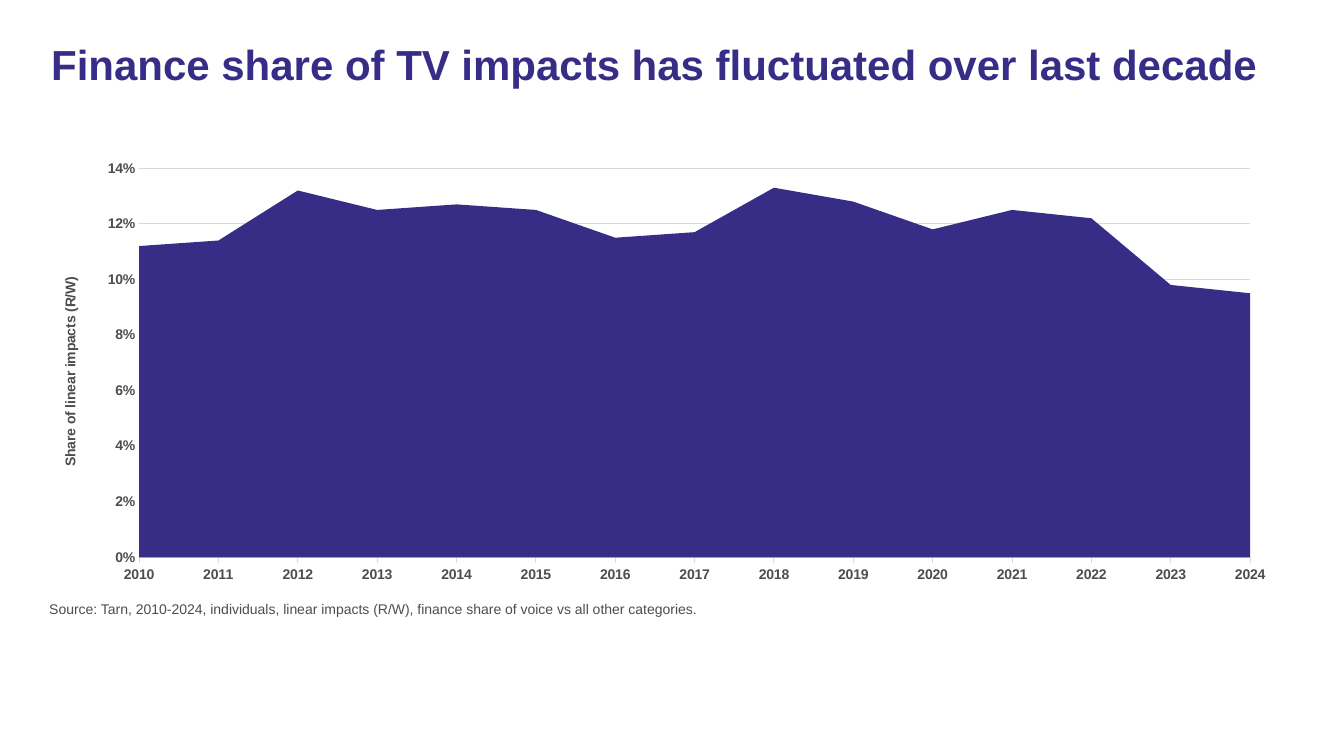
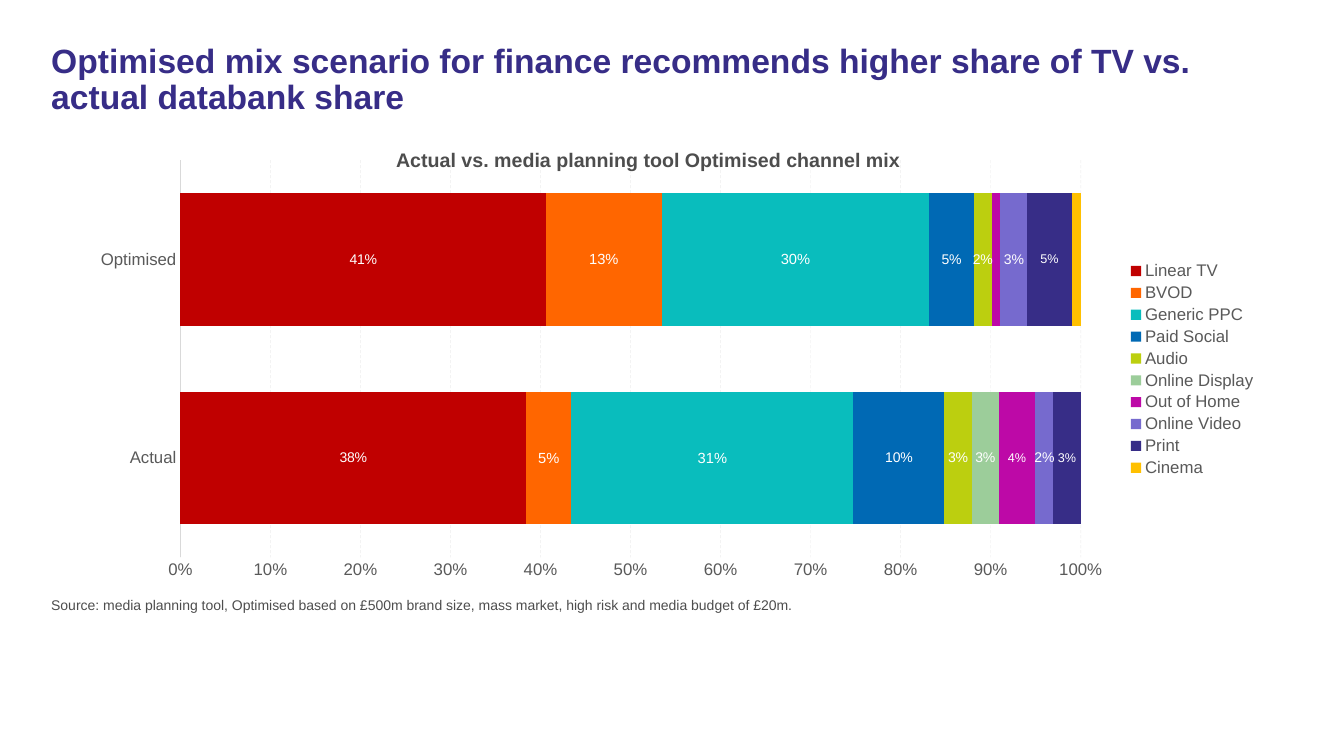
"""Two slides on finance advertising: share of TV impacts and channel mix."""
from pptx import Presentation
from pptx.chart.data import CategoryChartData
from pptx.dml.color import RGBColor
from pptx.enum.chart import XL_CHART_TYPE as ChartType, XL_LEGEND_POSITION as LegendPlace
from pptx.enum.chart import XL_TICK_MARK as TickMark
from pptx.enum.dml import MSO_LINE
from pptx.oxml import parse_xml
from pptx.oxml.ns import nsdecls
from pptx.util import Inches, Pt

FONT = "Arial"
INDIGO, GREY, AXIS_GREY, RULE, WHITE = "372D87", "4D4D4D", "595959", "D9D9D9", "FFFFFF"
LEFT, WIDTH = 0.41, 12.4

SHARE_TITLE = "Finance share of TV impacts has fluctuated over last decade"
SHARE_SOURCE = ("Source: Tarn, 2010-2024, individuals, linear impacts (R/W), "
                "finance share of voice vs all other categories.")
SHARE_AXIS = "Share of linear impacts (R/W)"
YEARS = [str(year) for year in range(2010, 2025)]
SHARES = [0.112, 0.114, 0.132, 0.125, 0.127, 0.125, 0.115, 0.117,
          0.133, 0.128, 0.118, 0.125, 0.122, 0.098, 0.095]
SHARE_FRAME = (LEFT, 1.51, WIDTH, 4.36)
SHARE_PLOT = (1.38, 1.67, 11.02, 3.86)

MIX_TITLE = ("Optimised mix scenario for finance recommends higher share of TV vs. "
             "actual databank share")
MIX_HEADING = "Actual vs. media planning tool Optimised channel mix"
MIX_SOURCE = ("Source: media planning tool, Optimised based on £500m brand size, "
              "mass market, high risk and media budget of £20m.")
SCENARIOS = ["Actual", "Optimised"]
CHANNELS = [  # name, values, colour, label size, scenarios without a label
    ("Linear TV", (0.38, 0.41), "C00000", 10, ()),
    ("BVOD", (0.05, 0.13), "FF6600", 10.5, ()),
    ("Generic PPC", (0.31, 0.3), "09BDBD", 10.5, ()),
    ("Paid Social", (0.1, 0.05), "0069B4", 10, ()),
    ("Audio", (0.03, 0.02), "BCCF0F", 10, ()),
    ("Online Display", (0.03, 0), "9CCD9A", 10, (1,)),
    ("Out of Home", (0.04, 0.01), "BD09A7", 9, (1,)),
    ("Online Video", (0.02, 0.03), "766ACE", 10, ()),
    ("Print", (0.03, 0.05), INDIGO, 9, ()),
    ("Cinema", (0, 0.01), "FFC000", None, ()),
]
MIX_FRAME = (0.76, 1.5, 11.81, 4.33)
MIX_PLOT = (1.79, 1.59, 8.93, 3.94)


def rgb(value):
    return RGBColor.from_string(value)


def style_font(font, size, color, bold=False):
    font.name, font.size, font.bold = FONT, Pt(size), bold
    font.color.rgb = rgb(color)


def add_text(page, text, place, size, color, bold=False, line_spacing=None):
    box = page.shapes.add_textbox(*map(Inches, place))
    box.text_frame.word_wrap = True
    para = box.text_frame.paragraphs[0]
    para.text = text
    para.line_spacing = line_spacing
    style_font(para.runs[0].font, size, color, bold)


def add_page(deck, title, title_size, source, source_place):
    page = deck.slides.add_slide(deck.slide_layouts[6])
    add_text(page, title, (LEFT, 0.39, WIDTH, 1.12), title_size, INDIGO, True, 0.9)
    add_text(page, source, (*source_place, WIDTH, 0.33), 10, GREY)
    return page


def add_chart(page, kind, frame, plot_place, categories, series):
    data = CategoryChartData(number_format="0%")
    data.categories = categories
    for name, values in series:
        data.add_series(name, values)
    chart = page.shapes.add_chart(kind, *map(Inches, frame), data).chart
    chart.has_title = chart.has_legend = False
    left, top, width, height = frame
    x, y, w, h = plot_place
    parts = {"x": (x - left) / width, "y": (y - top) / height,
             "w": w / width, "h": h / height}
    sizes = "".join(f'<c:{key} val="{part:.4f}"/>' for key, part in parts.items())
    area = chart.plots[0]._element.getparent()
    for old in area.findall("{*}layout"):
        area.remove(old)
    area.insert(0, parse_xml(
        f'<c:layout {nsdecls("c")}><c:manualLayout><c:layoutTarget val="inner"/>'
        f'<c:xMode val="edge"/><c:yMode val="edge"/>{sizes}</c:manualLayout></c:layout>'))
    return chart


def style_axes(chart, size, color, bold, category_tick, top, step, grid_width):
    for axis in (chart.category_axis, chart.value_axis):
        style_font(axis.tick_labels.font, size, color, bold)
        axis.major_tick_mark = axis.minor_tick_mark = TickMark.NONE
    category, value = chart.category_axis, chart.value_axis
    category.has_major_gridlines = False
    category.major_tick_mark = category_tick
    value.has_major_gridlines = True
    value.minimum_scale, value.maximum_scale, value.major_unit = 0, top, step
    value.tick_labels.number_format = "0%"
    value.tick_labels.number_format_is_linked = False
    value.format.line.fill.background()
    grid = value.major_gridlines.format.line
    for line, width in ((category.format.line, 0.75), (grid, grid_width)):
        line.color.rgb, line.width = rgb(RULE), Pt(width)
    return grid


def fill_series(series, color):
    series.format.fill.solid()
    series.format.fill.fore_color.rgb = rgb(color)


def label_series(series, size, unlabelled):
    labels = series.data_labels
    labels.show_value = True
    labels.number_format, labels.number_format_is_linked = "0%", False
    style_font(labels.font, size, WHITE)
    for index in unlabelled:
        labels._element.insert(0, parse_xml(
            f'<c:dLbl {nsdecls("c")}><c:idx val="{index}"/><c:delete val="1"/></c:dLbl>'))


def build_share_page(deck):
    page = add_page(deck, SHARE_TITLE, 30, SHARE_SOURCE, (0.39, 5.91))
    chart = add_chart(page, ChartType.AREA, SHARE_FRAME, SHARE_PLOT,
                      YEARS, [("Series 1", SHARES)])
    style_font(chart.font, 10, GREY, True)
    style_axes(chart, 10, GREY, True, TickMark.OUTSIDE, 0.14, 0.02, 0.75)
    caption = chart.value_axis.axis_title.text_frame.paragraphs[0]
    caption.text = SHARE_AXIS
    style_font(caption.runs[0].font, 10, GREY, True)
    chart.plots[0].vary_by_categories = False
    fill_series(chart.plots[0].series[0], INDIGO)


def build_mix_page(deck):
    page = add_page(deck, MIX_TITLE, 24, MIX_SOURCE, (LEFT, 5.87))
    chart = add_chart(page, ChartType.BAR_STACKED_100, MIX_FRAME, MIX_PLOT,
                      SCENARIOS, [channel[:2] for channel in CHANNELS])
    style_font(chart.font, 10, "000000")
    grid = style_axes(chart, 12, AXIS_GREY, False, TickMark.NONE, 1, 0.1, 0.5)
    grid.dash_style = MSO_LINE.DASH
    grid_color = chart.value_axis.major_gridlines._xAx.find(
        "{*}majorGridlines").find(".//{*}srgbClr")
    grid_color.append(parse_xml(f'<a:alpha {nsdecls("a")} val="30000"/>'))
    chart.has_legend = True
    chart.legend.position = LegendPlace.RIGHT
    chart.legend.include_in_layout = False
    style_font(chart.legend.font, 12, AXIS_GREY)
    plot = chart.plots[0]
    plot.gap_width, plot.overlap, plot.vary_by_categories = 50, 100, False
    for series, (_, _, color, size, unlabelled) in zip(plot.series, CHANNELS):
        fill_series(series, color)
        if size:
            label_series(series, size, unlabelled)
    add_text(page, MIX_HEADING, (3.83, 1.42, 6.67, 0.34), 14, GREY, True)


def main():
    deck = Presentation()
    deck.slide_width, deck.slide_height = Inches(13.33), Inches(7.5)
    build_share_page(deck)
    build_mix_page(deck)
    deck.save("out.pptx")


if __name__ == "__main__":
    main()
